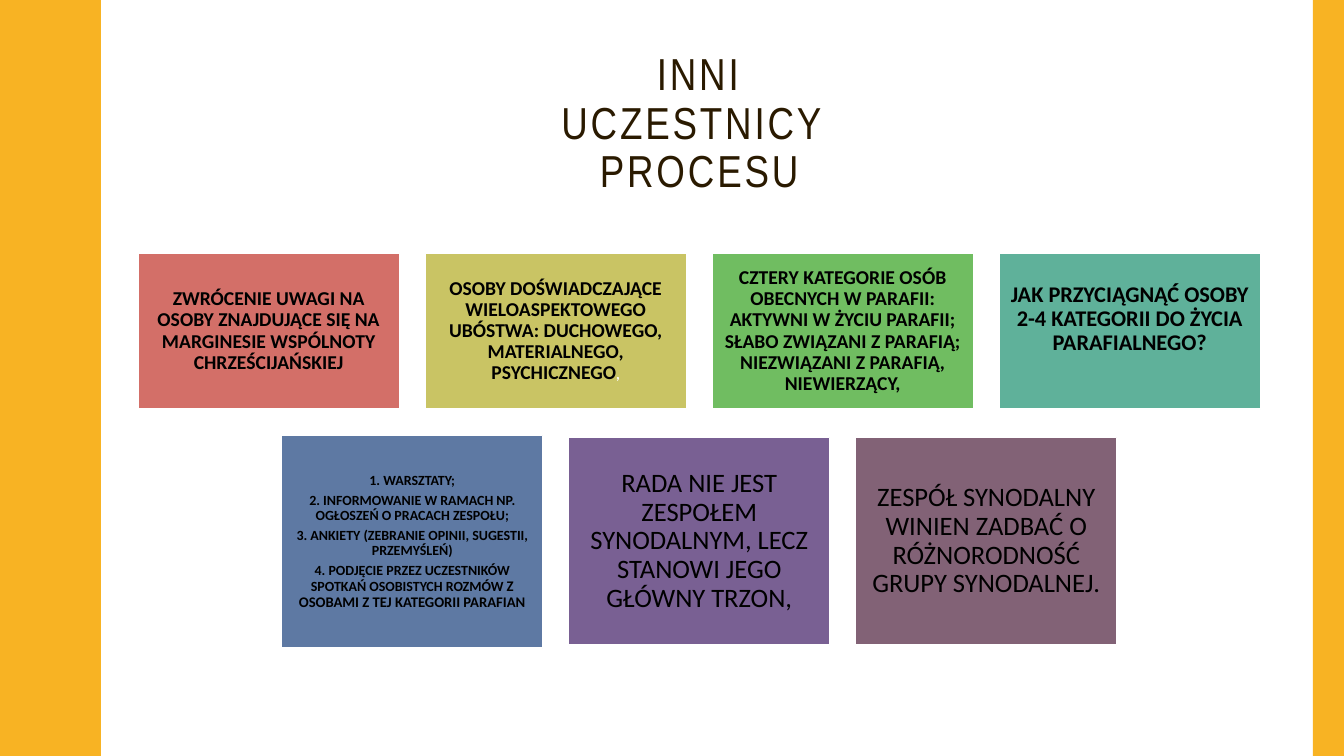
from copy import deepcopy

from pptx import Presentation
from pptx.dml.color import RGBColor
from pptx.enum import shapes, text
from pptx.util import Inches, Pt

AMBER = RGBColor(0xF8, 0xB3, 0x23)
BROWN = RGBColor(0x2A, 0x1A, 0x00)
WHITE = RGBColor(0xFF, 0xFF, 0xFF)
BLACK = RGBColor(0x00, 0x00, 0x00)
RED = RGBColor(0xD3, 0x6F, 0x68)
OLIVE = RGBColor(0xC9, 0xC4, 0x64)
GREEN = RGBColor(0x70, 0xBD, 0x61)
TEAL = RGBColor(0x5F, 0xB1, 0x9A)
BLUE = RGBColor(0x5E, 0x79, 0xA3)
VIOLET = RGBColor(0x79, 0x60, 0x93)
MAUVE = RGBColor(0x82, 0x62, 0x76)


def paint(shape, fill, line=None):
    shape.shadow.inherit = False
    shape.fill.solid()
    shape.fill.fore_color.rgb = fill
    if line is None:
        shape.line.fill.background()
    else:
        shape.line.color.rgb = line
        shape.line.width = Pt(1)


def add_span(para, words, color, **formats):
    span = para.add_run()
    span.text = words
    span.font.color.rgb = color
    for name, value in formats.items():
        setattr(span.font, name, value)
    return span


deck = Presentation()
deck.slide_width, deck.slide_height = Inches(13.33), Inches(7.5)
page = deck.slides.add_slide(deck.slide_layouts[5])

# Title
title = page.shapes.title
title.left, title.top = Inches(1.37), Inches(0.42)
title.width, title.height = Inches(11.13), Inches(1.63)
frame = title.text_frame
frame.word_wrap = True
frame.auto_size = text.MSO_AUTO_SIZE.NONE
frame.vertical_anchor = text.MSO_ANCHOR.MIDDLE
para = frame.paragraphs[0]
para.alignment = text.PP_ALIGN.CENTER
para.line_spacing = 0.9
for number, words in enumerate(["INNI", "UCZESTNICY ", "PROCESU"]):
    if number:
        para.add_line_break()
        para._p[-1].append(deepcopy(span.font._element))
    span = add_span(para, words, BROWN, name="Arial Narrow", size=Pt(32), bold=False)
    span.font._element.set("spc", "200")

# Wavy left edge: half a wave, mirrored and repeated five times
WAVE = 1.5
half = [(0.78, 0), (0.78, 0.07), (0.79, 0.14), (0.8, 0.2), (0.81, 0.25),
        (0.83, 0.29), (0.85, 0.33), (0.87, 0.38), (0.89, 0.42), (0.91, 0.46),
        (0.93, 0.5), (0.95, 0.55), (0.96, 0.61), (0.97, 0.68), (0.97, 0.75)]
wave = half + [(x, WAVE - y) for x, y in reversed(half[:-1])]
edge = [(x, y + WAVE * turn) for turn in range(5) for x, y in wave]
builder = page.shapes.build_freeform(0, 0, scale=Inches(1))
builder.add_line_segments(edge + [(0, 7.5)], close=True)
paint(builder.convert_to_shape(), AMBER)

right_band = page.shapes.add_shape(
    shapes.MSO_SHAPE.RECTANGLE, Inches(13.02), 0, Inches(0.31), Inches(7.5))
paint(right_band, AMBER)

# Cards: column, top, height, fill, inset, size, bold, paragraphs of spans;
# a span that differs from its card is a tuple of words, size and colour
LEFT, WIDTH = 1.37, 2.59
PITCH = (9.91 - LEFT) / 3
cards = [
    (0, 2.51, 1.55, RED, 0.06, 14, True,
     [["ZWRÓCENIE UWAGI NA OSOBY ZNAJDUJĄCE SIĘ NA MARGINESIE WSPÓLNOTY "
       "CHRZEŚCIJAŃSKIEJ"]]),
    (1, 2.51, 1.55, OLIVE, 0.06, 14, True,
     [["OSOBY DOŚWIADCZAJĄCE WIELOASPEKTOWEGO UBÓSTWA: DUCHOWEGO, "
       "MATERIALNEGO, PSYCHICZNEGO", (",", 10.5, WHITE)]]),
    (2, 2.51, 1.55, GREEN, 0.06, 14, True,
     [["CZTERY KATEGORIE OSÓB OBECNYCH W PARAFII: AKTYWNI W ŻYCIU PARAFII; "
       "SŁABO ZWIĄZANI Z PARAFIĄ; NIEZWIĄZANI Z PARAFIĄ, NIEWIERZĄCY,"]]),
    (3, 2.51, 1.55, TEAL, 0.07, 16, True,
     [["JAK PRZYCIĄGNĄĆ OSOBY 2-4 KATEGORII DO ŻYCIA PARAFIALNEGO?"]]),
    (0.5, 4.32, 2.11, BLUE, 0.04, 10, True,
     [["1. WARSZTATY;"],
      ["2. INFORMOWANIE W RAMACH NP. OGŁOSZEŃ O PRACACH ZESPOŁU;"],
      ["3. ANKIETY (ZEBRANIE OPINII, SUGESTII, PRZEMYŚLEŃ)"],
      ["4. PODJĘCIE PRZEZ UCZESTNIKÓW SPOTKAŃ OSOBISTYCH ROZMÓW ",
       ("Z OSOBAMI Z TEJ KATEGORII PARAFIAN", 10.5, BLACK)]]),
    (1.5, 4.34, 2.06, VIOLET, 0.08, 19, False,
     [["RADA NIE JEST ZESPOŁEM SYNODALNYM, LECZ STANOWI JEGO GŁÓWNY TRZON,"]]),
    (2.5, 4.34, 2.06, MAUVE, 0.08, 19, False,
     [["ZESPÓŁ SYNODALNY WINIEN ZADBAĆ O RÓŻNORODNOŚĆ GRUPY SYNODALNEJ."]]),
]
for column, top, height, fill, inset, size, bold, paragraphs in cards:
    card = page.shapes.add_shape(
        shapes.MSO_SHAPE.RECTANGLE, Inches(LEFT + column * PITCH), Inches(top),
        Inches(WIDTH), Inches(height))
    paint(card, fill, WHITE)
    frame = card.text_frame
    frame.word_wrap = True
    frame.vertical_anchor = text.MSO_ANCHOR.MIDDLE
    for side in ("left", "top", "right", "bottom"):
        setattr(frame, f"margin_{side}", Inches(inset))
    if fill == TEAL:
        frame.margin_bottom = Inches(0.31)  # this text sits above the middle
    for number, spans in enumerate(paragraphs):
        para = frame.add_paragraph() if number else frame.paragraphs[0]
        para.alignment = text.PP_ALIGN.CENTER
        para.line_spacing = 0.9
        para.space_after = Pt(round(size * 0.35, 1))
        for item in spans:
            words, points, color = item if isinstance(item, tuple) else (item, size, BLACK)
            add_span(para, words, color, name="Calibri", size=Pt(points), bold=bold)

deck.save("out.pptx")
